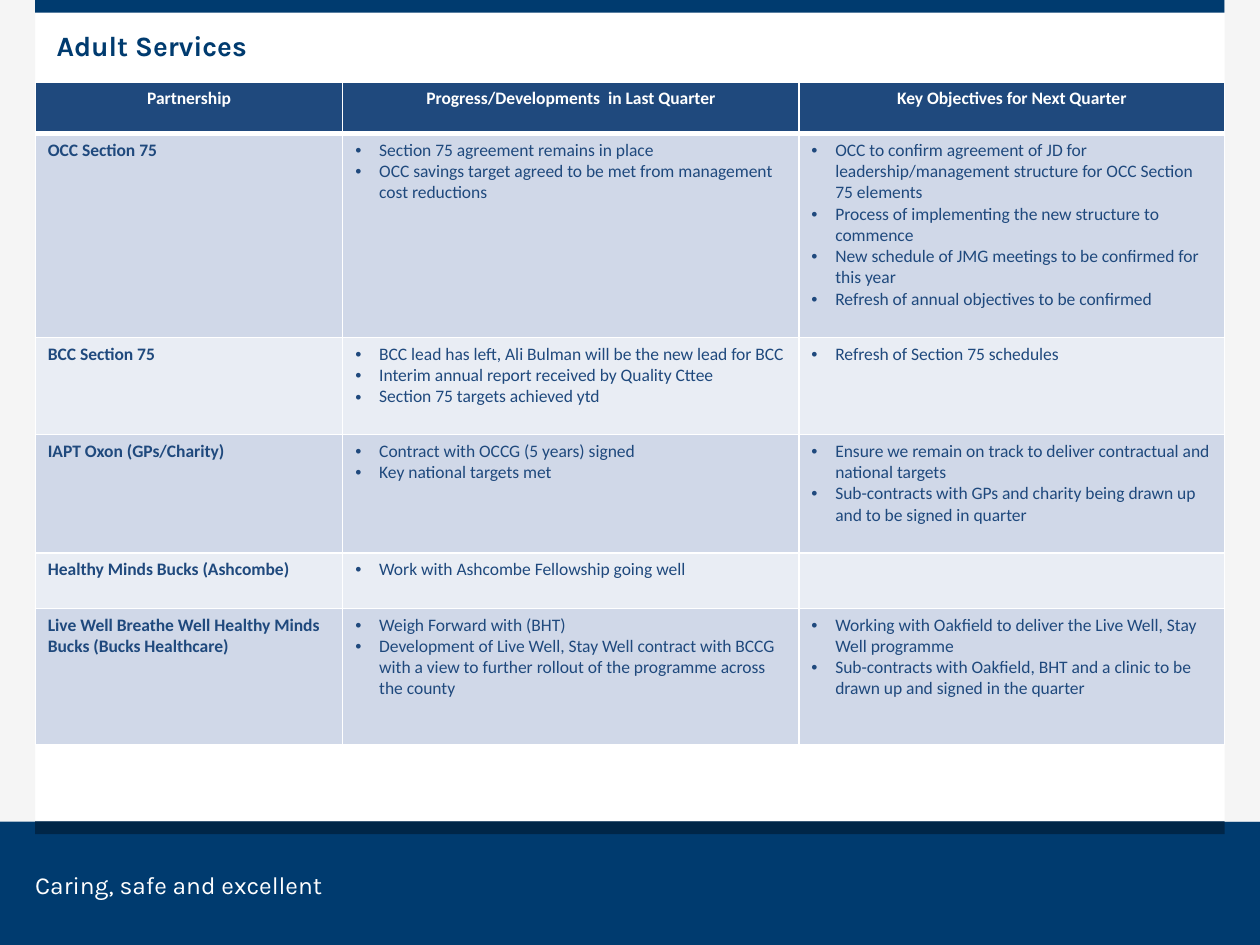
import pptx
import pptx.dml.color
import pptx.enum.shapes
import pptx.enum.text
import pptx.oxml
import pptx.oxml.ns
import pptx.util
from dataclasses import dataclass
from lxml import etree

Inches = pptx.util.Inches
ALIGN = pptx.enum.text.PP_ALIGN


@dataclass(frozen=True)
class Theme:
    """Colours, fonts and type sizes of the slide."""
    navy: str = "003B6F"
    deep: str = "002648"
    side: str = "F5F5F5"
    white: str = "FFFFFF"
    blue: str = "1F497D"
    bands: tuple = ("D0D8E8", "E9EDF4")
    brand: str = "Karla"
    body: str = "Calibri"
    title: int = 16
    motto: int = 14
    cell: int = 10


THEME = Theme()
EDGE = 0.28
WIDTH = 9.44
FOOT = 6.52
COLS = (2.44, 3.62, 3.38)
ROWS = (0.41, 1.62, 0.77, 0.94, 0.44, 1.08)
HEADS = ("Partnership", "Progress/Developments  in Last Quarter",
         "Key Objectives for Next Quarter")
DEALS = (
    ("OCC Section 75",
     ("Section 75 agreement remains in place",
      "OCC savings target agreed to be met from management cost reductions"),
     ("OCC to confirm agreement of JD for leadership/management structure "
      "for OCC Section 75 elements",
      "Process of implementing the new structure to commence",
      "New schedule of JMG meetings to be confirmed for this year",
      "Refresh of annual objectives to be confirmed")),
    ("BCC Section 75",
     ("BCC lead has left, Ali Bulman will be the new lead for BCC",
      "Interim annual report received by Quality Cttee",
      "Section 75 targets achieved ytd"),
     ("Refresh of Section 75 schedules",)),
    ("IAPT Oxon (GPs/Charity)",
     ("Contract with OCCG (5 years) signed",
      "Key national targets met"),
     ("Ensure we remain on track to deliver contractual and national targets",
      "Sub-contracts with GPs and charity being drawn up and to be signed "
      "in quarter")),
    ("Healthy Minds Bucks (Ashcombe)",
     ("Work with Ashcombe Fellowship going well",),
     ()),
    ("Live Well Breathe Well Healthy Minds Bucks (Bucks Healthcare)",
     ("Weigh Forward with (BHT)",
      "Development of Live Well, Stay Well contract with BCCG with a view "
      "to further rollout of the programme across the county"),
     ("Working with Oakfield to deliver the Live Well, Stay Well programme",
      "Sub-contracts with Oakfield, BHT and a clinic to be drawn up and "
      "signed in the quarter")),
)


def rgb(code):
    """Turn a hex code into a colour."""
    return pptx.dml.color.RGBColor.from_string(code)


def style(para, face, size, tint, bold=False):
    """Format every run of a paragraph."""
    for run in para.runs:
        run.font.name = face
        run.font.size = pptx.util.Pt(size)
        run.font.bold = bold
        run.font.color.rgb = rgb(tint)


def add_band(slide, left, top, width, height, fill):
    """Add a plain filled rectangle."""
    band = slide.shapes.add_shape(
        pptx.enum.shapes.MSO_SHAPE.RECTANGLE,
        Inches(left), Inches(top), Inches(width), Inches(height))
    band.shadow.inherit = False
    band.fill.solid()
    band.fill.fore_color.rgb = rgb(fill)
    band.line.fill.background()


def add_label(slide, text, left, top, width, height, size, tint, bold=False):
    """Add one line of text, centred in height, without insets."""
    box = slide.shapes.add_textbox(
        Inches(left), Inches(top), Inches(width), Inches(height))
    frame = box.text_frame
    frame.text = text
    frame.word_wrap = True
    frame.vertical_anchor = pptx.enum.text.MSO_ANCHOR.MIDDLE
    frame.margin_left = frame.margin_right = 0
    frame.margin_top = frame.margin_bottom = 0
    style(frame.paragraphs[0], THEME.brand, size, tint, bold)


def add_bullet(para):
    """Give a paragraph a hanging bullet."""
    props = para._p.get_or_add_pPr()
    props.set("marL", str(Inches(0.19)))
    props.set("indent", str(-Inches(0.19)))
    sub = etree.SubElement
    sub(props, pptx.oxml.ns.qn("a:buFont")).set("typeface", "Arial")
    sub(props, pptx.oxml.ns.qn("a:buChar")).set("char", "•")


def set_edges(cell, top, base):
    """Draw white cell borders with the given top and bottom weights."""
    props = cell._tc.get_or_add_tcPr()
    sides = (("L", 1), ("R", 1), ("T", top), ("B", base))
    for spot, (side, weight) in enumerate(sides):
        props.insert(spot, pptx.oxml.parse_xml(
            f'<a:ln{side} {pptx.oxml.ns.nsdecls("a")} '
            f'w="{pptx.util.Pt(weight)}"><a:solidFill>'
            f'<a:srgbClr val="{THEME.white}"/></a:solidFill></a:ln{side}>'))


def fill_cell(cell, lines, fill, tint, bold, align=None, marks=False):
    """Write the lines of a cell and colour it."""
    cell.fill.solid()
    cell.fill.fore_color.rgb = rgb(fill)
    cell.text_frame.text = "\n".join(lines)
    for para in cell.text_frame.paragraphs:
        if marks and lines:
            add_bullet(para)
        para.alignment = align
        style(para, THEME.body, THEME.cell, tint, bold)


def add_grid(slide):
    """Add the table of partnerships."""
    grid = slide.shapes.add_table(
        len(ROWS), len(COLS), Inches(EDGE), Inches(0.65),
        Inches(WIDTH), Inches(sum(ROWS))).table
    for col, width in zip(grid.columns, COLS):
        col.width = Inches(width)
    for row, height in zip(grid.rows, ROWS):
        row.height = Inches(height)
    for col, head in enumerate(HEADS):
        fill_cell(grid.cell(0, col), [head], THEME.blue, THEME.white,
                  True, ALIGN.CENTER)
    for row, (name, *lists) in enumerate(DEALS, 1):
        fill = THEME.bands[(row - 1) % 2]
        fill_cell(grid.cell(row, 0), [name], fill, THEME.blue, True)
        for col, lines in enumerate(lists, 1):
            fill_cell(grid.cell(row, col), lines, fill, THEME.blue,
                      False, marks=True)
    for row in range(len(ROWS)):
        for col in range(len(COLS)):
            set_edges(grid.cell(row, col), 3 if row == 1 else 1,
                      3 if row == 0 else 1)


def main():
    """Build and save the slide."""
    deck = pptx.Presentation()
    deck.slide_width, deck.slide_height = Inches(10), Inches(7.5)
    slide = deck.slides.add_slide(deck.slide_layouts[6])
    add_band(slide, 0, 0, EDGE, FOOT, THEME.side)
    add_band(slide, 0, FOOT, 10, 7.5 - FOOT, THEME.navy)
    add_band(slide, EDGE, FOOT, WIDTH, 0.1, THEME.deep)
    add_band(slide, EDGE, 0, WIDTH, 0.1, THEME.navy)
    add_band(slide, 10 - EDGE, 0, EDGE, FOOT, THEME.side)
    add_label(slide, "Caring, safe and excellent", EDGE, 6.9, 3.07, 0.24,
              THEME.motto, THEME.white)
    add_label(slide, "Adult Services", 0.45, -0.11, 8.8, 0.94,
              THEME.title, THEME.navy, True)
    add_grid(slide)
    deck.save("out.pptx")


if __name__ == "__main__":
    main()
